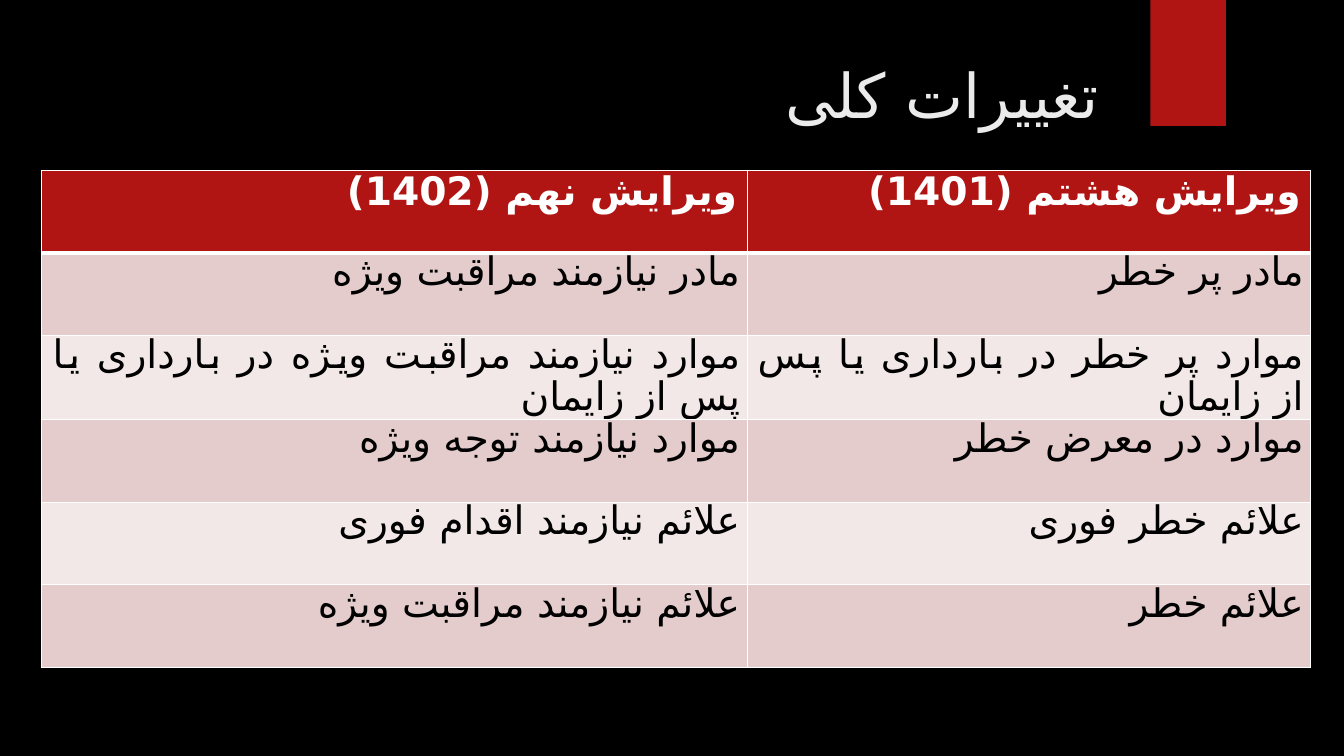
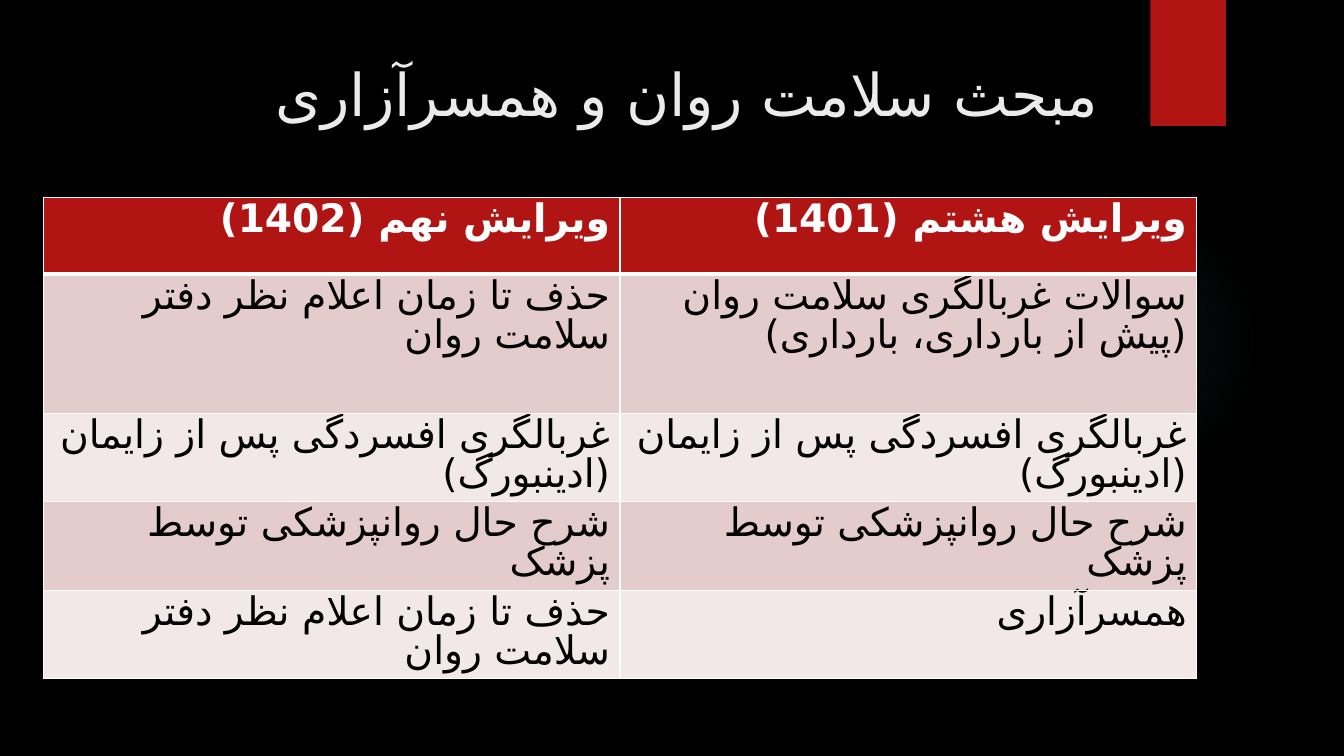
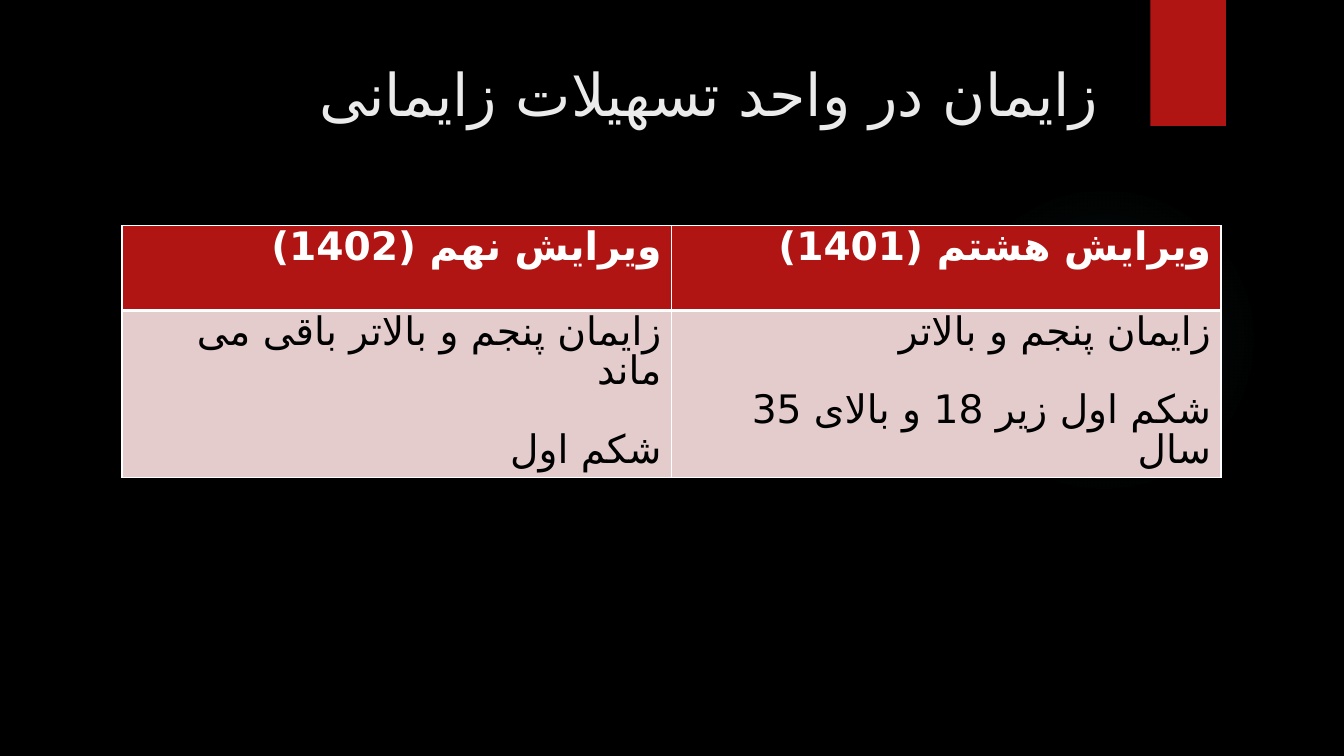
from itertools import groupby

from lxml import etree
from pptx import Presentation
from pptx.dml.color import RGBColor
from pptx.enum.shapes import MSO_SHAPE
from pptx.enum.text import MSO_ANCHOR, PP_ALIGN
from pptx.oxml import parse_xml
from pptx.oxml.ns import qn
from pptx.util import Inches, Pt

OVAL, RECTANGLE = MSO_SHAPE.OVAL, MSO_SHAPE.RECTANGLE
TOP = MSO_ANCHOR.TOP
RIGHT, JUSTIFY = PP_ALIGN.RIGHT, PP_ALIGN.JUSTIFY

BLACK, WHITE, RED = "000000", "FFFFFF", "B01513"
TITLE_COLOUR, GLOW_COLOUR = "EBEBEB", "50B9C1"
BANDS = ("E4CCCC", "F2E8E7")
GLOW_STOPS = ((0, 7), (36, 6), (69, 0))
THEME_FONT, PERSIAN_FONT = "TeX Gyre Adventor", "DejaVu Sans"
FIGURES = "0123456789()"
HEADINGS = ("ویرایش نهم (1402)", "ویرایش هشتم (1401)")
DRAWING_NS = "http://schemas.openxmlformats.org/drawingml/2006/main"

HEADING_STYLE = {
    "font": {"size": Pt(28), "name": THEME_FONT, "bold": True},
    "paragraph": {"alignment": RIGHT, "line_spacing": Pt(28)},
    "colour": WHITE,
    "cell": {},
    "gap": 0,
}
BODY_STYLE = {
    **HEADING_STYLE,
    "font": {"size": Pt(28), "name": THEME_FONT, "bold": False},
    "colour": BLACK,
}
JUSTIFIED_STYLE = {
    **BODY_STYLE,
    "font": {"size": Pt(28), "name": "Calibri", "bold": False},
    "paragraph": {"alignment": JUSTIFY, "line_spacing": Pt(30)},
    "cell": {
        "margin_left": Inches(0.07),
        "margin_right": Inches(0.07),
        "margin_top": 0,
        "margin_bottom": 0,
    },
}
SPACED_STYLE = {**BODY_STYLE, "gap": 28}

SLIDES = (
    {
        "title": "تغییرات کلی",
        "title_size": 44,
        "origin": (0.41, 1.69),
        "columns": (7, 5.59),
        "heights": (0.82,) * 6,
        "style": JUSTIFIED_STYLE,
        "rows": (
            ("مادر نیازمند مراقبت ویژه", "مادر پر خطر"),
            (
                "موارد نیازمند مراقبت ویژه در بارداری یا پس از زایمان",
                "موارد پر خطر در بارداری یا پس از زایمان",
            ),
            ("موارد نیازمند توجه ویژه", "موارد در معرض خطر"),
            ("علائم نیازمند اقدام فوری", "علائم خطر فوری"),
            ("علائم نیازمند مراقبت ویژه", "علائم خطر"),
        ),
    },
    {
        "title": "مبحث سلامت روان و همسرآزاری",
        "title_size": 42,
        "origin": (0.43, 1.96),
        "columns": (5.72, 5.72),
        "heights": (0.76, 1.38, 0.87, 0.87, 0.87),
        "style": BODY_STYLE,
        "rows": (
            (
                "حذف تا زمان اعلام نظر دفتر سلامت روان",
                "سوالات غربالگری سلامت روان\n(پیش از بارداری، بارداری)",
            ),
            ("غربالگری افسردگی پس از زایمان (ادینبورگ)",) * 2,
            ("شرح حال روانپزشکی توسط پزشک",) * 2,
            ("حذف تا زمان اعلام نظر دفتر سلامت روان", "همسرآزاری"),
        ),
    },
    {
        "title": "زایمان در واحد تسهیلات زایمانی",
        "title_size": 42,
        "origin": (1.21, 2.24),
        "columns": (5.45, 5.45),
        "heights": (0.84, 1.33),
        "style": SPACED_STYLE,
        "rows": (
            (
                "زایمان پنجم و بالاتر باقی می ماند\nشکم اول",
                "زایمان پنجم و بالاتر\nشکم اول زیر 18 و بالای 35 سال",
            ),
        ),
    },
)


def rgb(value):
    return RGBColor.from_string(value)


def apply_format(target, values):
    for name, value in values.items():
        setattr(target, name, value)


def write_line(paragraph, line, style):
    has_digits = any(letter.isdigit() for letter in line)
    pieces = groupby(line, lambda letter: has_digits and letter in FIGURES)
    for is_figure, letters in pieces:
        run = paragraph.add_run()
        run.text = "".join(letters)
        apply_format(run.font, style["font"])
        run.font.color.rgb = rgb(style["colour"])
        properties = run._r.get_or_add_rPr()
        properties.set("lang", "fa-IR")
        if not is_figure:
            etree.SubElement(properties, qn("a:cs"), typeface=PERSIAN_FONT)


def write_text(frame, text, style):
    for index, line in enumerate(text.split("\n")):
        paragraph = frame.add_paragraph() if index else frame.paragraphs[0]
        paragraph._p.get_or_add_pPr().set("rtl", "1")
        apply_format(paragraph, style["paragraph"])
        if index and style["gap"]:
            paragraph.space_before = Pt(style["gap"])
        write_line(paragraph, line, style)


def add_plain_shape(slide, kind, box, colour):
    shape = slide.shapes.add_shape(kind, *map(Inches, box))
    shape.shadow.inherit = False
    shape.fill.solid()
    shape.fill.fore_color.rgb = rgb(colour)
    shape.line.fill.background()
    return shape


def add_glow(slide, box):
    glow = add_plain_shape(slide, OVAL, box, GLOW_COLOUR)
    stops = "".join(
        f'<a:gs pos="{position * 1000}"><a:srgbClr val="{GLOW_COLOUR}">'
        f'<a:alpha val="{opacity * 1000}"/></a:srgbClr></a:gs>'
        for position, opacity in GLOW_STOPS
    )
    gradient = parse_xml(
        f'<a:gradFill xmlns:a="{DRAWING_NS}"><a:gsLst>{stops}</a:gsLst>'
        '<a:path path="circle">'
        '<a:fillToRect l="50000" t="50000" r="50000" b="50000"/>'
        "</a:path></a:gradFill>"
    )
    properties = glow._element.spPr
    properties.replace(properties.find(qn("a:solidFill")), gradient)


def add_backdrop(slide):
    slide.background.fill.solid()
    slide.background.fill.fore_color.rgb = rgb(BLACK)
    add_glow(slide, (9.41, 1.83, 3.08, 3.08))
    add_plain_shape(slide, RECTANGLE, (11.41, 0, 0.75, 1.25), RED)


def add_title(slide, box, text, size):
    frame = slide.shapes.add_textbox(*map(Inches, box)).text_frame
    apply_format(frame, {"word_wrap": True, "vertical_anchor": TOP})
    style = {
        "font": {"size": Pt(size), "name": THEME_FONT},
        "paragraph": {"alignment": RIGHT},
        "colour": TITLE_COLOUR,
        "gap": 0,
    }
    write_text(frame, text, style)


def add_borders(cell, widths):
    properties = cell._tc.get_or_add_tcPr()
    for side, width in widths.items():
        border = etree.SubElement(properties, qn(f"a:ln{side}"), w=str(Pt(width)))
        fill = etree.SubElement(border, qn("a:solidFill"))
        etree.SubElement(fill, qn("a:srgbClr"), val=WHITE)


def fill_cell(cell, text, row, style):
    add_borders(
        cell,
        {"L": 1, "R": 1, "T": 3 if row == 1 else 1, "B": 1 if row else 3},
    )
    cell.fill.solid()
    cell.fill.fore_color.rgb = rgb(BANDS[(row - 1) % 2] if row else RED)
    apply_format(cell, style["cell"])
    write_text(cell.text_frame, text, style)


def add_comparison(slide, origin, columns, heights, rows, style):
    box = (*origin, sum(columns), sum(heights))
    table = slide.shapes.add_table(
        len(heights), len(columns), *map(Inches, box)
    ).table
    for column, width in zip(table.columns, columns):
        column.width = Inches(width)
    for table_row, height in zip(table.rows, heights):
        table_row.height = Inches(height)
    for row, texts in enumerate((HEADINGS, *rows)):
        for column, text in enumerate(texts):
            fill_cell(
                table.cell(row, column), text, row, style if row else HEADING_STYLE
            )


def build_slide(deck, content):
    slide = deck.slides.add_slide(deck.slide_layouts[6])
    add_backdrop(slide)
    add_title(
        slide, (0.71, 0.52, 10.29, 1.53), content["title"], content["title_size"]
    )
    add_comparison(
        slide,
        content["origin"],
        content["columns"],
        content["heights"],
        content["rows"],
        content["style"],
    )


def main():
    deck = Presentation()
    deck.slide_width, deck.slide_height = Inches(13.33), Inches(7.5)
    for content in SLIDES:
        build_slide(deck, content)
    deck.save("out.pptx")


if __name__ == "__main__":
    main()
